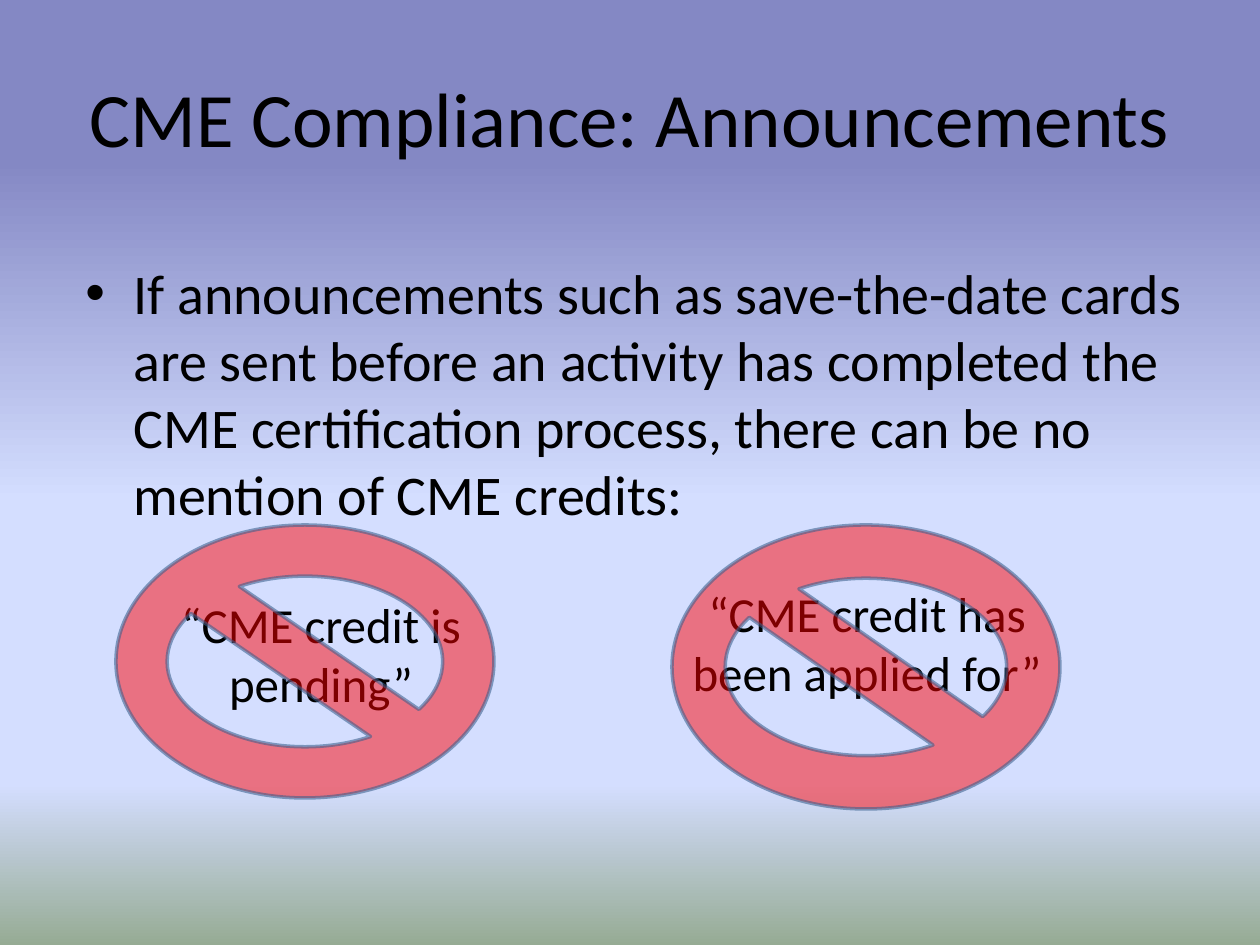
from lxml import etree
from pptx import Presentation
from pptx.dml.color import RGBColor
from pptx.enum.shapes import MSO_SHAPE
from pptx.enum.text import MSO_ANCHOR, PP_ALIGN
from pptx.oxml.ns import qn
from pptx.util import Pt

PX = 914400 / 126
BLACK = RGBColor(0x00, 0x00, 0x00)
RED = RGBColor(0xFF, 0x00, 0x00)
NAVY = RGBColor(0x3A, 0x5F, 0x8C)
SKY = [(17, RGBColor(0x84, 0x88, 0xC4)), (53, RGBColor(0xD4, 0xDE, 0xFF)),
       (83, RGBColor(0xD4, 0xDE, 0xFF)), (100, RGBColor(0x96, 0xAB, 0x94))]
CENTER, LEFT = PP_ALIGN.CENTER, PP_ALIGN.LEFT
TOP, MIDDLE = MSO_ANCHOR.TOP, MSO_ANCHOR.MIDDLE
NO_SMOKING = MSO_SHAPE.NO_SYMBOL


def emu(*lengths):
    return [round(n * PX) for n in lengths]


def write(sp, text, size=28, align=CENTER, anchor=TOP):
    tf = sp.text_frame
    tf.word_wrap = True
    tf.vertical_anchor = anchor
    p = tf.paragraphs[0]
    p.alignment = align
    r = p.add_run()
    r.text = text
    r.font.name = "Calibri"
    r.font.size = Pt(size)
    r.font.color.rgb = BLACK
    return p


prs = Presentation()
prs.slide_width, prs.slide_height = emu(1260, 945)
s = prs.slides.add_slide(prs.slide_layouts[5])

# Background gradient, top to bottom
fill = s.background.fill
fill.gradient()
fill.gradient_angle = 270
stops = next(s.element.iter(qn("a:gsLst")))
for gs in list(stops):
    stops.remove(gs)
for pos, color in SKY:
    gs = etree.SubElement(stops, qn("a:gs"), pos=str(pos * 1000))
    etree.SubElement(gs, qn("a:srgbClr"), val=str(color))

# Title
title = s.shapes.title
title.left, title.top, title.width, title.height = emu(63, 38, 1134, 158)
write(title, "CME Compliance: Announcements", size=44, anchor=MIDDLE)

# Bulleted rule
body = s.shapes.add_textbox(*emu(73, 252, 1134, 305))
p = write(body, "If announcements such as save-the-date cards are sent before "
          "an activity has completed the CME certification process, there can "
          "be no mention of CME credits:", size=32, align=LEFT)
p.space_before = Pt(6.4)
pPr = p._p.get_or_add_pPr()
indent = emu(48)[0]
pPr.set("marL", str(indent))
pPr.set("indent", str(-indent))
etree.SubElement(pPr, qn("a:buFont"), typeface="Arial")
etree.SubElement(pPr, qn("a:buChar"), char="•")

# Forbidden phrases
for text, x, y in [("“CME credit is pending”", 116, 588),
                   ("“CME credit has been applied for”", 662, 577)]:
    write(s.shapes.add_textbox(*emu(x, y, 410, 131)), text)

# Translucent prohibition signs
for x, w, h in [(116, 378, 273), (672, 388, 284)]:
    sp = s.shapes.add_shape(NO_SMOKING, *emu(x, 525, w, h))
    sp.shadow.inherit = False
    sp.line.width = Pt(2)
    for paint, color, alpha in [(sp.fill, RED, 49), (sp.line.fill, NAVY, 57)]:
        paint.solid()
        paint.fore_color.rgb = color
        clr = next(c for c in sp._element.spPr.iter(qn("a:srgbClr"))
                   if c.get("val") == str(color))
        etree.SubElement(clr, qn("a:alpha"), val=str(alpha * 1000))

prs.save("out.pptx")
